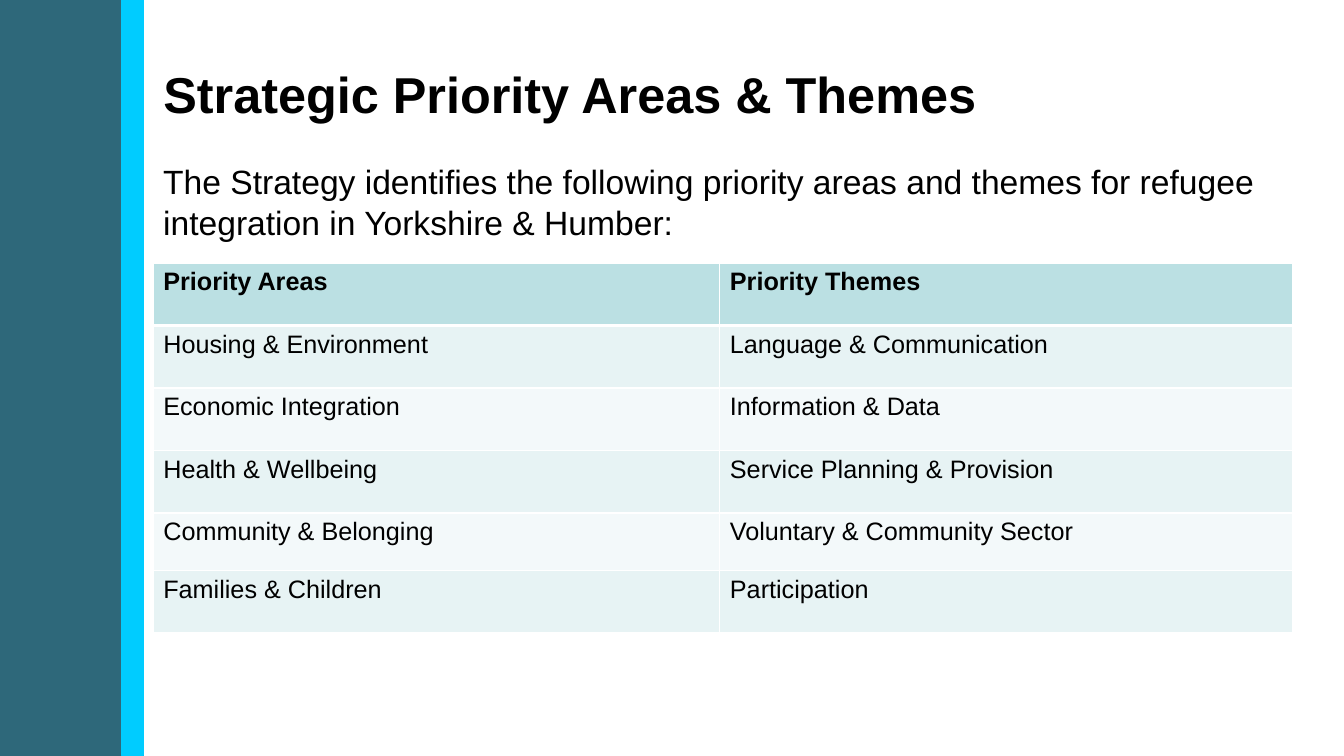
import pptx
import pptx.util
import pptx.dml.color
import pptx.enum.shapes
import pptx.enum.text
import pptx.oxml
from dataclasses import dataclass
from lxml import etree

Inches, Pt = pptx.util.Inches, pptx.util.Pt
WIDTH, HEIGHT = 13.33, 7.5
CONTENT_LEFT, TEXT_WIDTH = 1.52, 11.15
COLUMNS = (5.62, 5.68)
ROW, SHORT_ROW = 0.62, 0.57

PRIORITIES = (
    ("Priority Areas", "Priority Themes"),
    ("Housing & Environment", "Language & Communication"),
    ("Economic Integration", "Information & Data"),
    ("Health & Wellbeing", "Service Planning & Provision"),
    ("Community & Belonging", "Voluntary & Community Sector"),
    ("Families & Children", "Participation"),
)


@dataclass(frozen=True)
class Theme:
    font: str = "Arial"
    title: int = 36
    intro: int = 24
    cell: int = 18
    text: str = "000000"
    side: str = "2E687A"
    accent: str = "00CCFF"
    header: str = "BBE0E3"
    bands: tuple = ("F3F9FA", "E7F3F4")
    grid: str = "FFFFFF"


THEME = Theme()


def rgb(value):
    return pptx.dml.color.RGBColor.from_string(value)


def write(tf, text, size, bold=False):
    tf.text = text
    p = tf.paragraphs[0]
    p.alignment = pptx.enum.text.PP_ALIGN.LEFT
    p.font.name, p.font.size, p.font.bold = THEME.font, Pt(size), bold
    p.font.color.rgb = rgb(THEME.text)


def add_bar(s, left, width, color):
    bar = s.shapes.add_shape(pptx.enum.shapes.MSO_SHAPE.RECTANGLE,
                             Inches(left), 0, Inches(width), Inches(HEIGHT))
    bar.shadow.inherit = False
    bar.fill.solid()
    bar.fill.fore_color.rgb = rgb(color)
    bar.line.color.rgb = rgb(color)
    bar.line.width = Pt(0.75)


def add_title(s, text):
    sp = s.shapes.title
    sp.left, sp.top = Inches(CONTENT_LEFT), Inches(0.3)
    sp.width, sp.height = Inches(TEXT_WIDTH), Inches(1.25)
    tf = sp.text_frame
    tf.auto_size = pptx.enum.text.MSO_AUTO_SIZE.NONE
    tf.vertical_anchor = pptx.enum.text.MSO_ANCHOR.MIDDLE
    write(tf, text, THEME.title, bold=True)


def add_intro(s, text):
    sp = s.shapes.add_textbox(Inches(CONTENT_LEFT), Inches(1.55),
                              Inches(TEXT_WIDTH), Inches(0.91))
    tf = sp.text_frame
    tf.word_wrap = True
    tf.auto_size = pptx.enum.text.MSO_AUTO_SIZE.SHAPE_TO_FIT_TEXT
    write(tf, text, THEME.intro)


def set_borders(cell, widths):
    """Draw the left, right, top and bottom cell borders, widths in points."""
    tc_pr = cell._tc.get_or_add_tcPr()
    for side, width in zip("LRTB", widths):
        ln = etree.SubElement(tc_pr, pptx.oxml.ns.qn(f"a:ln{side}"), w=str(Pt(width)))
        fill = etree.SubElement(ln, pptx.oxml.ns.qn("a:solidFill"))
        etree.SubElement(fill, pptx.oxml.ns.qn("a:srgbClr"), val=THEME.grid)


def add_priority_table(s, rows):
    heights = [ROW] * len(rows)
    heights[-2] = SHORT_ROW
    table = s.shapes.add_table(
        len(rows), len(COLUMNS), Inches(CONTENT_LEFT), Inches(2.61),
        Inches(sum(COLUMNS)), Inches(sum(heights))).table
    for column, width in zip(table.columns, COLUMNS):
        column.width = Inches(width)
    for i, (labels, height) in enumerate(zip(rows, heights)):
        table.rows[i].height = Inches(height)
        header = i == 0
        for j, label in enumerate(labels):
            cell = table.cell(i, j)
            # The header is ruled off by a thicker line
            set_borders(cell, (1, 1, 3 if i == 1 else 1, 3 if header else 1))
            cell.fill.solid()
            cell.fill.fore_color.rgb = rgb(THEME.header if header else THEME.bands[i % 2])
            write(cell.text_frame, label, THEME.cell, bold=header)


def main():
    prs = pptx.Presentation()
    prs.slide_width, prs.slide_height = Inches(WIDTH), Inches(HEIGHT)
    s = prs.slides.add_slide(prs.slide_layouts[5])

    # Side bars
    add_bar(s, 0, 1.42, THEME.side)
    add_bar(s, 1.21, 0.21, THEME.accent)

    # Heading and introduction
    add_title(s, "Strategic Priority Areas & Themes")
    add_intro(s, "The Strategy identifies the following priority areas and themes "
                 "for refugee integration in Yorkshire & Humber:")

    # Areas and themes
    add_priority_table(s, PRIORITIES)
    prs.save("out.pptx")


if __name__ == "__main__":
    main()
